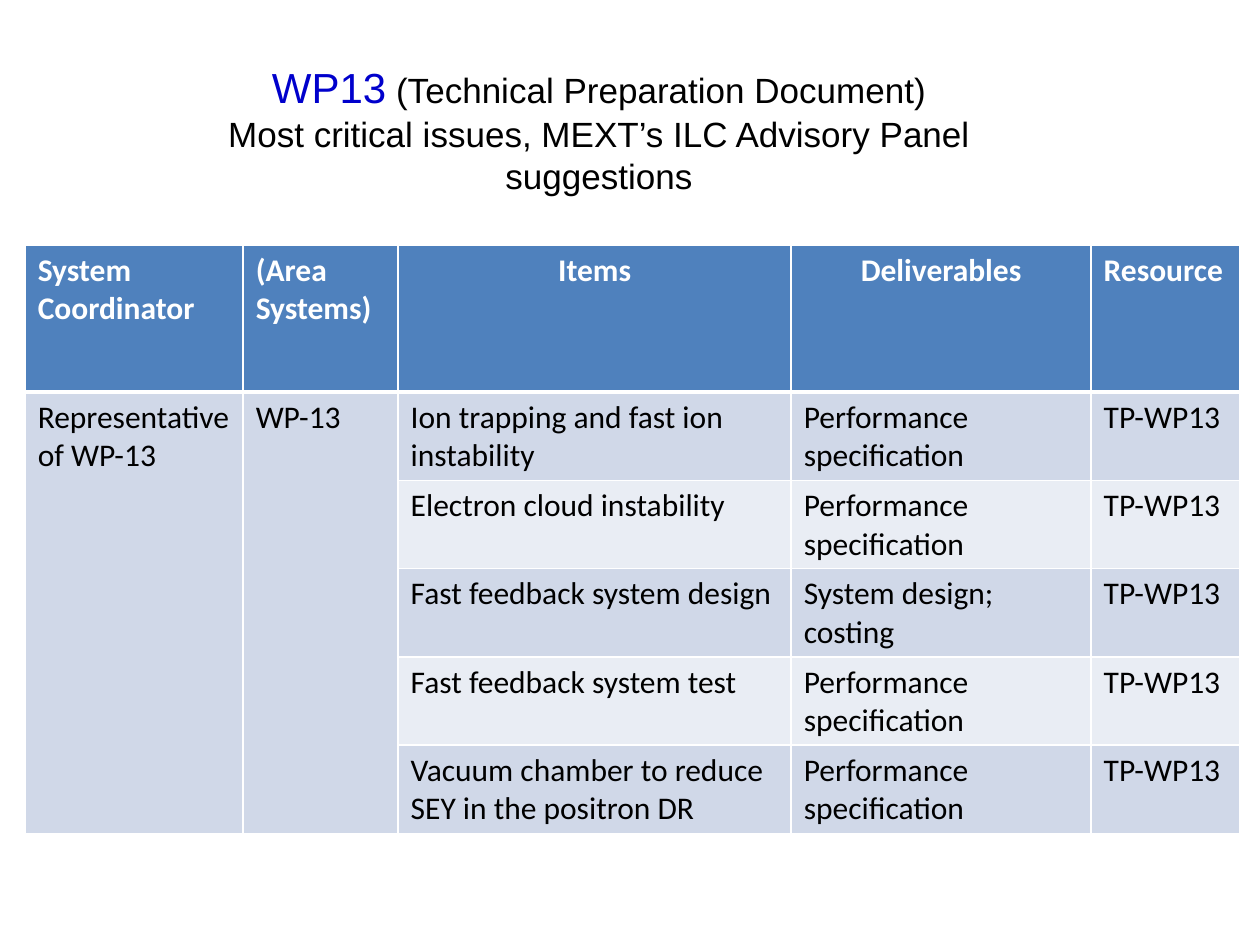
from lxml import etree
from pptx import Presentation
from pptx.dml.color import RGBColor
from pptx.enum.text import MSO_AUTO_SIZE, PP_ALIGN
from pptx.oxml.ns import qn
from pptx.util import Inches, Pt

CENTER, LEFT = PP_ALIGN.CENTER, PP_ALIGN.LEFT
FIT_SHAPE = MSO_AUTO_SIZE.SHAPE_TO_FIT_TEXT

WHITE = RGBColor(0xFF, 0xFF, 0xFF)
BLACK = RGBColor(0x00, 0x00, 0x00)
TITLE_BLUE = RGBColor(0x00, 0x00, 0xCC)
HEADER_BLUE = RGBColor(0x4F, 0x81, 0xBD)
BANDS = (RGBColor(0xD0, 0xD8, 0xE8), RGBColor(0xE9, 0xED, 0xF4))

WIDTH, HEIGHT = Inches(10), Inches(7.5)
COLUMN_SHARES = (0.173, 0.123, 0.312, 0.238, 0.118)
HEADER_SHARE, ROW_SHARE = 0.156, 0.0933

TITLE_FORMAT = {"name": "Arial", "size": Pt(20)}
WORK_PACKAGE_FORMAT = {"name": "Arial", "size": Pt(24)}
HEADER_FORMAT = {"name": "Calibri", "size": Pt(18), "bold": True}
BODY_FORMAT = {"name": "Calibri", "size": Pt(18), "bold": False}

HEADERS = (
    ("System Coordinator", LEFT),
    ("(Area Systems)", LEFT),
    ("Items", CENTER),
    ("Deliverables", CENTER),
    ("Resource", LEFT),
)
COORDINATION = ("Representative of WP-13", "WP-13")
RESOURCE = "TP-WP13"
SPECIFICATION = "Performance specification"
TASKS = (
    ("Ion trapping and fast ion instability", SPECIFICATION),
    ("Electron cloud instability", SPECIFICATION),
    ("Fast feedback system design", "System design; costing"),
    ("Fast feedback system test", SPECIFICATION),
    ("Vacuum chamber to reduce SEY in the positron DR", SPECIFICATION),
)


def across(share):
    """Return a share of the slide's width."""
    return round(WIDTH * share)


def down(share):
    """Return a share of the slide's height."""
    return round(HEIGHT * share)


def add_run(paragraph, text, color, values):
    """Append a run of text with the given colour and font values."""
    run = paragraph.add_run()
    run.text = text
    for name, value in values.items():
        setattr(run.font, name, value)
    run.font.color.rgb = color


def add_title(slide):
    """Add the two centred title lines, the first set off to the left."""
    box = slide.shapes.add_textbox(across(0.106), down(0.059), across(0.787), down(0.112))
    frame = box.text_frame
    frame.word_wrap = True
    frame.auto_size = FIT_SHAPE
    first, second = frame.paragraphs[0], frame.add_paragraph()
    first.alignment = second.alignment = CENTER
    first._p.get_or_add_pPr().set("marR", str(across(0.048)))
    add_run(first, "WP13", TITLE_BLUE, WORK_PACKAGE_FORMAT)
    add_run(first, " (Technical Preparation Document)", BLACK, TITLE_FORMAT)
    add_run(second, "Most critical issues, MEXT’s ILC Advisory Panel suggestions", BLACK, TITLE_FORMAT)


def set_borders(cell, widths):
    """Draw white cell borders with the given width for each side."""
    properties = cell._tc.get_or_add_tcPr()
    for side, width in widths.items():
        line = etree.SubElement(properties, qn(f"a:ln{side}"), w=str(Pt(width)))
        fill = etree.SubElement(line, qn("a:solidFill"))
        etree.SubElement(fill, qn("a:srgbClr"), val=str(WHITE))


def style_cell(cell, fill, top=1, bottom=1):
    """Give a cell its white borders and its fill."""
    set_borders(cell, {"L": 1, "R": 1, "T": top, "B": bottom})
    cell.fill.solid()
    cell.fill.fore_color.rgb = fill


def write_cell(cell, text, color, values, alignment=LEFT):
    """Write one paragraph into a cell."""
    paragraph = cell.text_frame.paragraphs[0]
    paragraph.alignment = alignment
    add_run(paragraph, text, color, values)


def add_work_table(slide):
    """Add the table of tasks, deliverables and resources."""
    row_count = len(TASKS) + 1
    table = slide.shapes.add_table(
        row_count, len(HEADERS), across(0.02), down(0.259),
        across(sum(COLUMN_SHARES)), down(HEADER_SHARE + ROW_SHARE * len(TASKS)),
    ).table
    for column, share in zip(table.columns, COLUMN_SHARES):
        column.width = across(share)
    for index, row in enumerate(table.rows):
        row.height = down(ROW_SHARE if index else HEADER_SHARE)

    for column, (text, alignment) in enumerate(HEADERS):
        cell = table.cell(0, column)
        style_cell(cell, HEADER_BLUE, bottom=3)
        write_cell(cell, text, WHITE, HEADER_FORMAT, alignment)

    merged = len(COORDINATION)
    for row, task in enumerate(TASKS, start=1):
        for column in range(len(HEADERS)):
            band = 0 if column < merged else (row - 1) % 2
            style_cell(table.cell(row, column), BANDS[band], top=3 if row == 1 else 1)
        for column, text in enumerate((*task, RESOURCE), start=merged):
            write_cell(table.cell(row, column), text, BLACK, BODY_FORMAT)

    for column, text in enumerate(COORDINATION):
        cell = table.cell(1, column)
        cell.merge(table.cell(row_count - 1, column))
        write_cell(cell, text, BLACK, BODY_FORMAT)


def main():
    """Build the slide and save the presentation."""
    presentation = Presentation()
    presentation.slide_width, presentation.slide_height = WIDTH, HEIGHT
    slide = presentation.slides.add_slide(presentation.slide_layouts[6])
    add_title(slide)
    add_work_table(slide)
    presentation.save("out.pptx")


if __name__ == "__main__":
    main()
